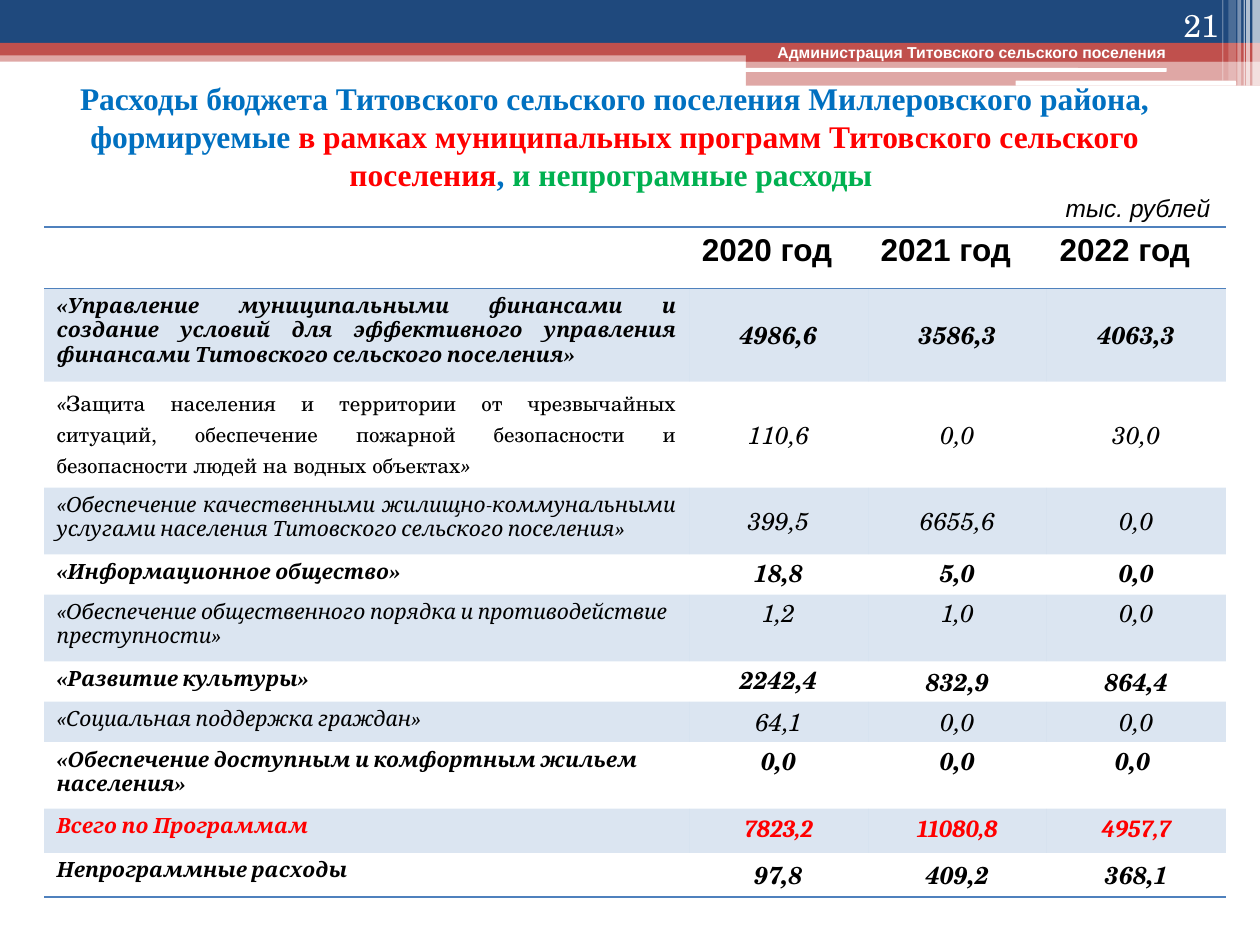
from lxml.etree import SubElement
from pptx import Presentation
from pptx.dml.color import RGBColor
from pptx.enum.shapes import MSO_SHAPE
from pptx.enum.text import MSO_ANCHOR, PP_ALIGN
from pptx.oxml import parse_xml
from pptx.oxml.ns import nsdecls, qn
from pptx.util import Inches, Pt

WIDE, HIGH = Inches(10), Inches(7.5)
COLS, ROWS = 1000, 750
NAVY, BRICK = RGBColor(0x1F, 0x49, 0x7D), RGBColor(0xC0, 0x50, 0x4D)
STEEL, SKY = RGBColor(0x4F, 0x81, 0xBD), RGBColor(0x00, 0x70, 0xC0)
RED, GREEN = RGBColor(0xFF, 0x00, 0x00), RGBColor(0x00, 0xB0, 0x50)
BLACK, WHITE = RGBColor(0, 0, 0), RGBColor(0xFF, 0xFF, 0xFF)
SANS, SERIF, BOOK, ROMAN = "Arial", "Cambria", "TeX Gyre Schola", "Times New Roman"
LEFT, MID, RIGHT, FULL = PP_ALIGN.LEFT, PP_ALIGN.CENTER, PP_ALIGN.RIGHT, PP_ALIGN.JUSTIFY
ANCHOR = {"t": MSO_ANCHOR.TOP, "m": MSO_ANCHOR.MIDDLE, "b": MSO_ANCHOR.BOTTOM}
PLAIN = "{2D5ABB26-0587-4C30-8999-92F81FD0307C}"

YEARS = ["2020 год", "2021 год", "2022 год"]
GUARD = [
    ("«", {}),
    ("Защита населения и территории от чрезвычайных ситуаций, обеспечение пожарной "
     "безопасности и безопасности людей на водных объектах", {"face": BOOK, "slant": False}),
    ("»", {}),
]
LINES = [
    (74, True, "mmm", FULL, BLACK, "«Управление муниципальными финансами и создание условий для "
     "эффективного управления финансами Титовского сельского поселения»",
     ["4986,6", "3586,3", "4063,3"]),
    (84, False, "mmm", FULL, BLACK, GUARD, ["110,6", "0,0", "30,0"]),
    (53, False, "mmm", FULL, BLACK, "«Обеспечение качественными жилищно-коммунальными услугами "
     "населения Титовского сельского поселения»", ["399,5", "6655,6", "0,0"]),
    (32, True, "ttt", LEFT, BLACK, "«Информационное общество»", ["18,8", "5,0", "0,0"]),
    (53, False, "ttt", LEFT, BLACK, "«Обеспечение общественного порядка и противодействие "
     "преступности»", ["1,2", "1,0", "0,0"]),
    (32, True, "tmm", LEFT, BLACK, "«Развитие культуры»", ["2242,4", "832,9", "864,4"]),
    (32, False, "mmm", LEFT, BLACK, "«Социальная поддержка граждан»", ["64,1", "0,0", "0,0"]),
    (53, True, "ttt", LEFT, BLACK, "«Обеспечение доступным и комфортным жильем населения»",
     ["0,0", "0,0", "0,0 "]),
    (35, True, "ttt", LEFT, RED, "Всего по Программам", ["7823,2", "11080,8", "4957,7"]),
    (35, True, "mmm", LEFT, BLACK, "Непрограммные расходы", ["97,8", "409,2", "368,1"]),
]


def place(box, x=0, y=0, w=None, h=None):
    """Turn grid units inside a box into slide lengths."""
    left, top, wide, high = box
    wide, high = wide if w is None else w, high if h is None else h
    return (round(WIDE * (left + x) / COLS), round(HIGH * (top + y) / ROWS),
            round(WIDE * wide / COLS), round(HIGH * high / ROWS))


def paint(fill, node, tone, share=100):
    """Fill with a tone at a share of full strength."""
    fill.solid()
    fill.fore_color.rgb = tone
    if share < 100:
        for mark in node.iter(qn("a:srgbClr")):
            SubElement(mark, qn("a:alpha")).set("val", str(share * 1000))


def write(frame, text, face=SANS, size=12, tone=BLACK, bold=False, slant=False, align=LEFT):
    """Write a string or a list of (text, changes) in one paragraph."""
    para = frame.paragraphs[0]
    para.alignment = align
    base = {"face": face, "size": size, "tone": tone, "bold": bold, "slant": slant}
    for part, change in [(text, {})] if isinstance(text, str) else text:
        look = {**base, **change}
        run = para.add_run()
        run.text = part
        font = run.font
        font.name, font.size = look["face"], Pt(look["size"])
        font.bold, font.italic = look["bold"], look["slant"]
        font.color.rgb = look["tone"]


def label(slide, box, text, anchor="t", **look):
    """Add a wrapped text box."""
    frame = slide.shapes.add_textbox(*place(box)).text_frame
    frame.word_wrap = True
    frame.vertical_anchor = ANCHOR[anchor]
    write(frame, text, **look)


def bar(slide, spot, tone, share=100, kind=MSO_SHAPE.RECTANGLE):
    """Add a flat bar without outline."""
    shape = slide.shapes.add_shape(kind, *spot)
    shape.shadow.inherit = False
    paint(shape.fill, shape.fill._xPr, tone, share)
    shape.line.fill.background()


def banner(slide, box):
    """Draw the bands and stripes at the top."""
    wide = box[2]
    for x, y, h, tone, share in [(0, 40, 9, BRICK, 50), (0, 0, 34, NAVY, 100),
                                 (0, 34, 10, BRICK, 100), (592, 39, 10, BRICK, 100),
                                 (592, 48, 20, BRICK, 50)]:
        bar(slide, place(box, x, y, wide - x, h), tone, share)
    for x, y, w, h in [(591, 54, 335, 3), (806, 64, 175, 4)]:
        bar(slide, place(box, x, y, w, h), WHITE, kind=MSO_SHAPE.ROUNDED_RECTANGLE)
    for x, w, h, share in [(994, 6, 68, 65), (989, 3, 68, 65), (987, 1, 68, 60),
                           (982, 3, 68, 40), (975, 6, 64, 20), (970, 1, 64, 30)]:
        bar(slide, place(box, x, 0, w, h), WHITE, share)


def heading(slide, box):
    """Write the title in three tones."""
    label(slide, box, [
        ("Расходы бюджета Титовского сельского поселения Миллеровского района, формируемые ", {}),
        ("в рамках муниципальных программ Титовского сельского поселения", {"tone": RED}),
        (", ", {}),
        ("и непрограмные расходы ", {"tone": GREEN}),
    ], anchor="m", face=ROMAN, size=18, tone=SKY, bold=True, align=MID)


def rule(cell, *sides):
    """Draw one-point lines on sides given in T, B order."""
    props = cell._tc.get_or_add_tcPr()
    for spot, side in enumerate(sides):
        props.insert(spot, parse_xml(
            f'<a:ln{side} {nsdecls("a")} w="12700"><a:solidFill><a:srgbClr val="{STEEL}"/>'
            f'</a:solidFill></a:ln{side}>'))


def ledger(slide, box):
    """Build the table of costs by year."""
    grid = slide.shapes.add_table(len(LINES) + 1, len(YEARS) + 1, *place(box)).table
    grid._tbl.tblPr.find(qn("a:tableStyleId")).text = PLAIN
    grid.first_row = grid.horz_banding = False
    for col, share in zip(grid.columns, [512] + [142] * len(YEARS)):
        col.width = round(WIDE * share / COLS)
    for row, share in zip(grid.rows, [49] + [line[0] for line in LINES]):
        row.height = round(HIGH * share / ROWS)
    for spot, year in enumerate(YEARS, 1):
        write(grid.cell(0, spot).text_frame, year, size=18, bold=True)
    for row, (_, bold, spots, align, tone, name, costs) in enumerate(LINES, 1):
        look = {"bold": bold, "slant": True, "tone": tone}
        write(grid.cell(row, 0).text_frame, name, face=SERIF, align=align, **look)
        total = tone == RED
        for col, (cost, anchor) in enumerate(zip(costs, spots), 1):
            cell = grid.cell(row, col)
            cell.vertical_anchor = ANCHOR[anchor]
            if not total:
                cell.margin_left = cell.margin_right = round(WIDE * 7 / COLS)
                cell.margin_top = cell.margin_bottom = 0
            write(cell.text_frame, cost, face=SERIF if total else BOOK, size=14,
                  align=MID, **look)
        if row % 2:
            for cell in grid.rows[row].cells:
                paint(cell.fill, cell._tc.tcPr, STEEL, 20)
    for cell in grid.rows[0].cells:
        rule(cell, "T", "B")
    for cell in grid.rows[len(LINES)].cells:
        rule(cell, "B")


def main():
    """Build and save the slide."""
    deck = Presentation()
    deck.slide_width, deck.slide_height = WIDE, HIGH
    slide = deck.slides.add_slide(deck.slide_layouts[6])
    banner(slide, (0, 0, COLS, 68))
    heading(slide, (0, 60, 976, 96))
    label(slide, (894, 0, 83, 40), "21", anchor="b", face=BOOK, size=18, tone=WHITE, align=RIGHT)
    ledger(slide, (35, 180, 938, 532))
    label(slide, (836, 148, 142, 34), "тыс. рублей", size=14, slant=True)
    label(slide, (570, 29, 402, 25), "Администрация Титовского сельского поселения",
          size=9, tone=WHITE, bold=True, align=MID)
    deck.save("out.pptx")


if __name__ == "__main__":
    main()
